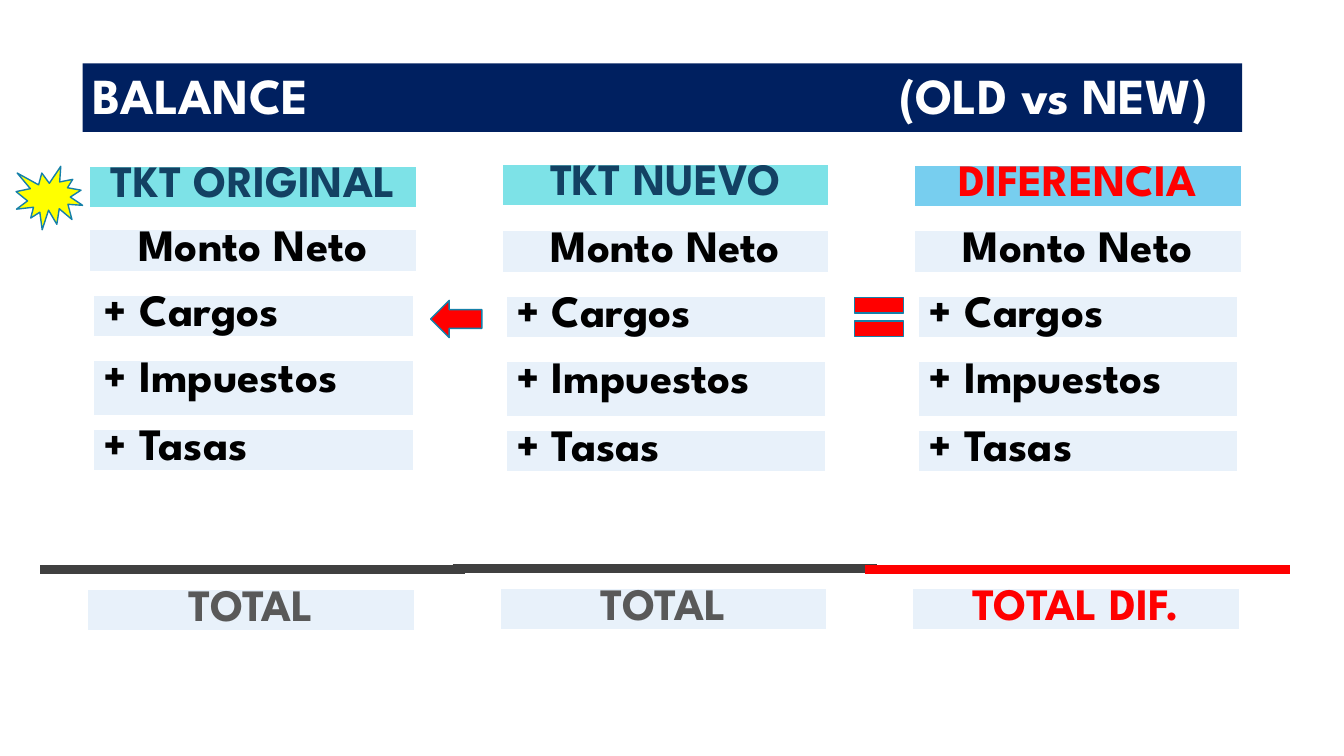
from dataclasses import dataclass

from lxml import etree
from pptx import Presentation
from pptx.dml.color import RGBColor
from pptx.enum.shapes import MSO_CONNECTOR, MSO_SHAPE
from pptx.enum.text import MSO_ANCHOR, PP_ALIGN
from pptx.oxml.ns import qn
from pptx.util import Inches, Pt

RECT = MSO_SHAPE.RECTANGLE
EQUAL = MSO_SHAPE.MATH_EQUAL
BURST = MSO_SHAPE.EXPLOSION1
LEFT_ARROW = MSO_SHAPE.LEFT_ARROW
STRAIGHT = MSO_CONNECTOR.STRAIGHT
LEFT, CENTER = PP_ALIGN.LEFT, PP_ALIGN.CENTER
MIDDLE = MSO_ANCHOR.MIDDLE


@dataclass(frozen=True)
class Theme:
    font: str = "League Spartan"
    title_size: int = 36
    cell_size: int = 32
    navy: str = "002060"
    white: str = "FFFFFF"
    black: str = "000000"
    pale: str = "E8F1FA"
    aqua: str = "7DE2E7"
    sky: str = "77CEEF"
    header_text: str = "134163"
    total_text: str = "595959"
    rule: str = "404040"
    red: str = "FF0000"
    yellow: str = "FFFF00"
    outline: str = "1580A9"


@dataclass(frozen=True)
class Column:
    header: str
    header_top: float
    header_fill: str
    header_color: str
    rows_top: float
    total: str
    total_top: float
    total_color: str
    rule_top: float
    rule_color: str


@dataclass(frozen=True)
class Row:
    label: str
    offset: float
    indent: float = 0.04
    width: float = 3.17
    row_height: float = 0
    height: float = 0.53
    align: PP_ALIGN = LEFT


@dataclass(frozen=True)
class Icon:
    kind: MSO_SHAPE
    left: float
    top: float
    width: float
    height: float
    fill: str


T = Theme()
COLUMN_LEFT, COLUMN_PITCH, COLUMN_WIDTH = 0.89, 4.09, 3.24
RULE_LEFT, RULE_WIDTH = 0.4, 4.21

COLUMNS = [
    Column("TKT ORIGINAL", 1.65, T.aqua, T.header_text, 2.28,
           "TOTAL", 5.85, T.total_text, 5.65, T.rule),
    Column("TKT NUEVO", 1.63, T.aqua, T.header_text, 2.29,
           "TOTAL", 5.84, T.total_text, 5.64, T.rule),
    Column("DIFERENCIA", 1.64, T.sky, T.red, 2.29,
           "TOTAL DIF.", 5.84, T.red, 5.65, T.red),
]
ROWS = [
    Row("Monto Neto", 0, indent=0, width=COLUMN_WIDTH, align=CENTER),
    Row("+ Cargos", 0.65),
    Row("+ Impuestos", 1.3, row_height=0.54, height=0.54),
    Row("+ Tasas", 1.98),
]
ICONS = [
    Icon(EQUAL, 8.39, 2.82, 0.66, 0.65, T.red),
    Icon(BURST, 0.16, 1.65, 0.66, 0.63, T.yellow),
    Icon(LEFT_ARROW, 4.27, 2.98, 0.51, 0.37, T.red),
]


def rgb(value: str) -> RGBColor:
    return RGBColor.from_string(value)


def add_run(p, text: str, size: int, color: str) -> None:
    r = p.add_run()
    r.text = text
    r.font.name = T.font
    r.font.size = Pt(size)
    r.font.bold = True
    r.font.color.rgb = rgb(color)


def add_title(s) -> None:
    sp = s.shapes.add_shape(RECT, Inches(0.82), Inches(0.63), Inches(11.5), Inches(0.68))
    sp.shadow.inherit = False
    sp.fill.solid()
    sp.fill.fore_color.rgb = rgb(T.navy)
    sp.line.fill.background()
    tf = sp.text_frame
    tf.word_wrap = True
    tf.vertical_anchor = MIDDLE
    p = tf.paragraphs[0]
    p.alignment = LEFT
    p.line_spacing = 0.9
    tabs = etree.SubElement(p._p.get_or_add_pPr(), qn("a:tabLst"))
    etree.SubElement(tabs, qn("a:tab"), pos=str(Inches(8)), algn="l")
    add_run(p, "BALANCE\t(OLD vs NEW)", T.title_size, T.white)


def add_borders(cell) -> None:
    tc_pr = cell._tc.get_or_add_tcPr()
    for index, side in enumerate(("lnL", "lnR", "lnT", "lnB")):
        ln = etree.Element(qn(f"a:{side}"), w=str(Pt(1)))
        fill = etree.SubElement(ln, qn("a:solidFill"))
        etree.SubElement(fill, qn("a:srgbClr"), val=T.white)
        tc_pr.insert(index, ln)


def add_band(s, row: Row, left: float, top: float, fill: str, color: str) -> None:
    frame = s.shapes.add_table(1, 1, Inches(left + row.indent), Inches(top + row.offset),
                               Inches(row.width), Inches(row.height))
    table = frame.table
    table.first_row = False
    table.horz_banding = False
    table.rows[0].height = Inches(row.row_height)
    frame.height = Inches(row.height)
    cell = table.cell(0, 0)
    cell.margin_left = cell.margin_right = Inches(0.1)
    cell.margin_top = cell.margin_bottom = 0
    cell.fill.solid()
    cell.fill.fore_color.rgb = rgb(fill)
    add_borders(cell)
    p = cell.text_frame.paragraphs[0]
    p.alignment = row.align
    add_run(p, row.label, T.cell_size, color)


def add_rule(s, left: float, top: float, color: str) -> None:
    line = s.shapes.add_connector(STRAIGHT, Inches(left), Inches(top),
                                  Inches(left + RULE_WIDTH), Inches(top))
    line.line.color.rgb = rgb(color)
    line.line.width = Pt(6)
    etree.SubElement(line._element.spPr, qn("a:effectLst"))


def add_column(s, index: int, column: Column) -> None:
    shift = index * COLUMN_PITCH
    left = COLUMN_LEFT + shift
    header = Row(column.header, 0, indent=0, width=COLUMN_WIDTH, align=CENTER)
    total = Row(column.total, 0, indent=-0.02, width=COLUMN_WIDTH, align=CENTER)
    add_band(s, header, left, column.header_top, column.header_fill, column.header_color)
    for row in ROWS:
        add_band(s, row, left, column.rows_top, T.pale, T.black)
    add_band(s, total, left, column.total_top, T.pale, column.total_color)
    add_rule(s, RULE_LEFT + shift, column.rule_top, column.rule_color)


def add_icon(s, icon: Icon) -> None:
    sp = s.shapes.add_shape(icon.kind, Inches(icon.left), Inches(icon.top),
                            Inches(icon.width), Inches(icon.height))
    sp.shadow.inherit = False
    sp.fill.solid()
    sp.fill.fore_color.rgb = rgb(icon.fill)
    sp.line.color.rgb = rgb(T.outline)
    sp.line.width = Pt(1)


def main() -> None:
    prs = Presentation()
    prs.slide_width, prs.slide_height = Inches(13.33), Inches(7.5)
    s = prs.slides.add_slide(prs.slide_layouts[6])
    add_title(s)
    for index, column in enumerate(COLUMNS):
        add_column(s, index, column)
    for icon in ICONS:
        add_icon(s, icon)
    prs.save("out.pptx")


if __name__ == "__main__":
    main()
